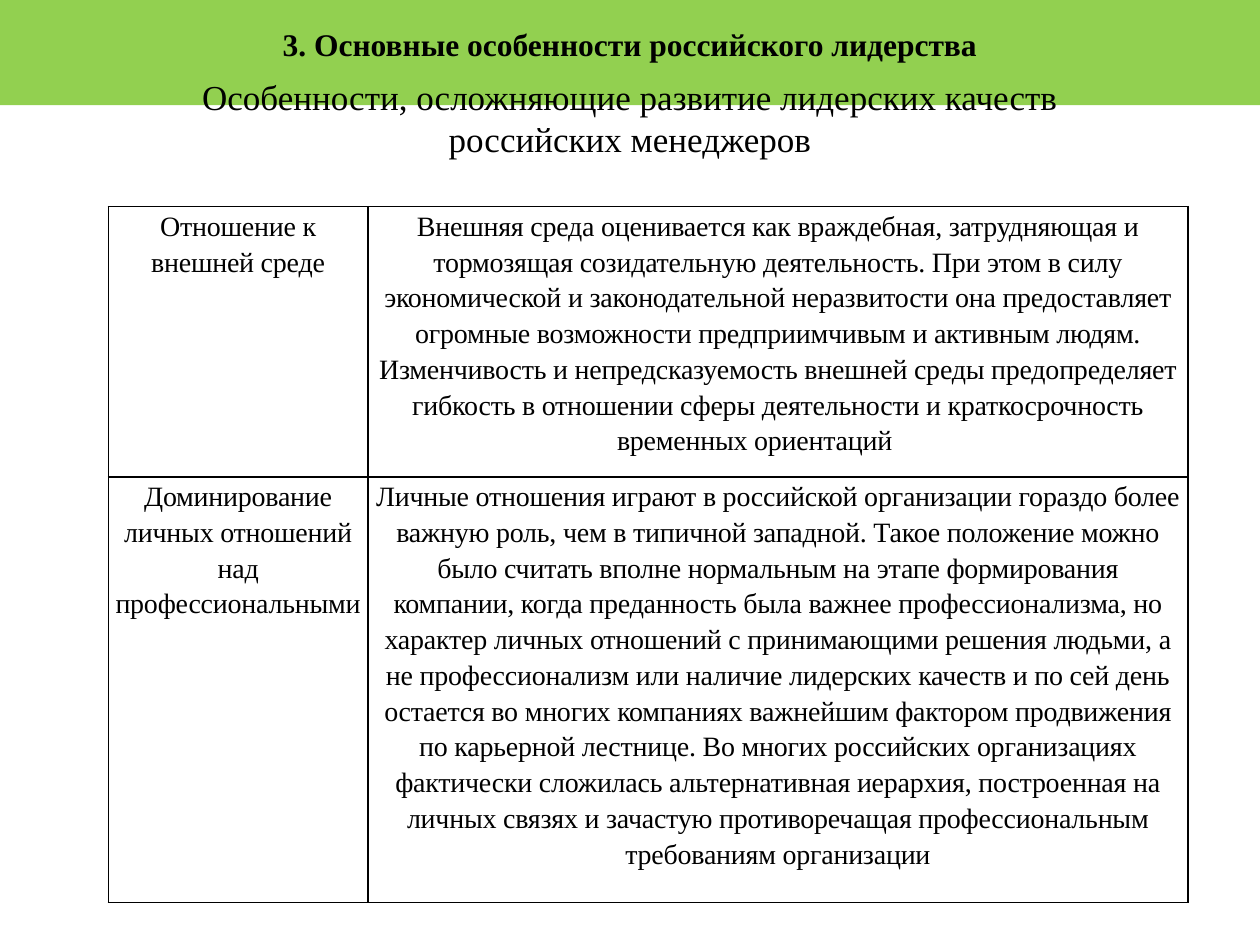
from dataclasses import dataclass

import pptx
import pptx.dml.color
import pptx.enum.text
import pptx.oxml
import pptx.oxml.ns
import pptx.util
from pptx.enum.text import MSO_ANCHOR, MSO_AUTO_SIZE, PP_ALIGN

WIDTH, HEIGHT = 10, 7.5
FONT = "Times New Roman"
BLACK, GREEN = "000000", "92D050"
COLUMNS = (2.06, 6.51)


@dataclass
class Feature:
    name: str
    description: str
    height: float


FEATURES = [
    Feature(
        "Отношение к внешней среде",
        "Внешняя среда оценивается как враждебная, затрудняющая и тормозящая "
        "созидательную деятельность. При этом в силу экономической и "
        "законодательной неразвитости она предоставляет огромные возможности "
        "предприимчивым и активным людям. Изменчивость и непредсказуемость "
        "внешней среды предопределяет гибкость в отношении сферы деятельности "
        "и краткосрочность временных ориентаций\t ",
        2.14,
    ),
    Feature(
        "Доминирование личных отношений над профессиональными",
        "Личные отношения играют в российской организации гораздо более важную "
        "роль, чем в типичной западной. Такое положение можно было считать "
        "вполне нормальным на этапе формирования компании, когда преданность "
        "была важнее профессионализма, но характер личных отношений с "
        "принимающими решения людьми, а не профессионализм или наличие "
        "лидерских качеств и по сей день остается во многих компаниях важнейшим "
        "фактором продвижения по карьерной лестнице. Во многих российских "
        "организациях фактически сложилась альтернативная иерархия, построенная "
        "на личных связях и зачастую противоречащая профессиональным "
        "требованиям организации",
        3.38,
    ),
]


def color(value: str) -> pptx.dml.color.RGBColor:
    return pptx.dml.color.RGBColor.from_string(value)


def box(left: float, top: float, width: float, height: float) -> list:
    return [pptx.util.Inches(v) for v in (left, top, width, height)]


def write(tf, text: str, size: float, bold: bool = False, spacing: float = 1.0,
          after: float = 0, tracking: float = 0) -> None:
    """Fill a text frame with centred paragraphs, one per line of text."""
    tf.text = text
    tf.word_wrap = True
    for p in tf.paragraphs:
        p.alignment = PP_ALIGN.CENTER
        p.line_spacing = spacing
        p.space_after = pptx.util.Pt(after)
        for r in p.runs:
            r.font.name = FONT
            r.font.size = pptx.util.Pt(size)
            r.font.bold = bold
            r.font.color.rgb = color(BLACK)
            if tracking:
                r._r.get_or_add_rPr().set("spc", str(round(tracking * 100)))


def set_borders(cell, value: str, width: float) -> None:
    tc_pr = cell._tc.get_or_add_tcPr()
    for i, side in enumerate(("lnL", "lnR", "lnT", "lnB")):
        tc_pr.insert(i, pptx.oxml.parse_xml(
            f'<a:{side} {pptx.oxml.ns.nsdecls("a")} w="{pptx.util.Pt(width)}">'
            f'<a:solidFill><a:srgbClr val="{value}"/></a:solidFill></a:{side}>'))


def fill_cell(cell, text: str) -> None:
    cell.margin_left = cell.margin_right = pptx.util.Inches(0.05)
    cell.margin_top = cell.margin_bottom = 0
    cell.fill.background()
    write(cell.text_frame, text, 16, spacing=1.15, after=10, tracking=-0.1)
    set_borders(cell, BLACK, 1)


def add_heading(s) -> None:
    sp = s.shapes.title
    sp.left, sp.top, sp.width, sp.height = box(0, 0, WIDTH, 0.51)
    sp.fill.solid()
    sp.fill.fore_color.rgb = color(GREEN)
    tf = sp.text_frame
    tf.vertical_anchor = MSO_ANCHOR.TOP
    tf.auto_size = MSO_AUTO_SIZE.SHAPE_TO_FIT_TEXT
    write(tf, "3. Основные особенности российского лидерства", 18,
          bold=True, spacing=1.5)


def add_subtitle(s) -> None:
    tf = s.shapes.add_textbox(*box(0, 0.55, WIDTH, 0.77)).text_frame
    tf.vertical_anchor = MSO_ANCHOR.MIDDLE
    tf.auto_size = MSO_AUTO_SIZE.SHAPE_TO_FIT_TEXT
    write(tf, "Особенности, осложняющие развитие лидерских качеств\n"
              "российских менеджеров", 20)


def add_features(s, features: list[Feature]) -> None:
    height = sum(f.height for f in features)
    table = s.shapes.add_table(
        len(features), len(COLUMNS),
        *box(0.86, 1.64, sum(COLUMNS), height)).table
    table.first_row = table.horz_banding = False
    for column, width in zip(table.columns, COLUMNS):
        column.width = pptx.util.Inches(width)
    for row, feature in zip(table.rows, features):
        row.height = pptx.util.Inches(feature.height)
        for cell, text in zip(row.cells, (feature.name, feature.description)):
            fill_cell(cell, text)


def main() -> None:
    prs = pptx.Presentation()
    prs.slide_width = pptx.util.Inches(WIDTH)
    prs.slide_height = pptx.util.Inches(HEIGHT)
    s = prs.slides.add_slide(prs.slide_layouts[5])  # title only
    add_heading(s)
    add_subtitle(s)
    add_features(s, FEATURES)
    prs.save("out.pptx")


if __name__ == "__main__":
    main()
